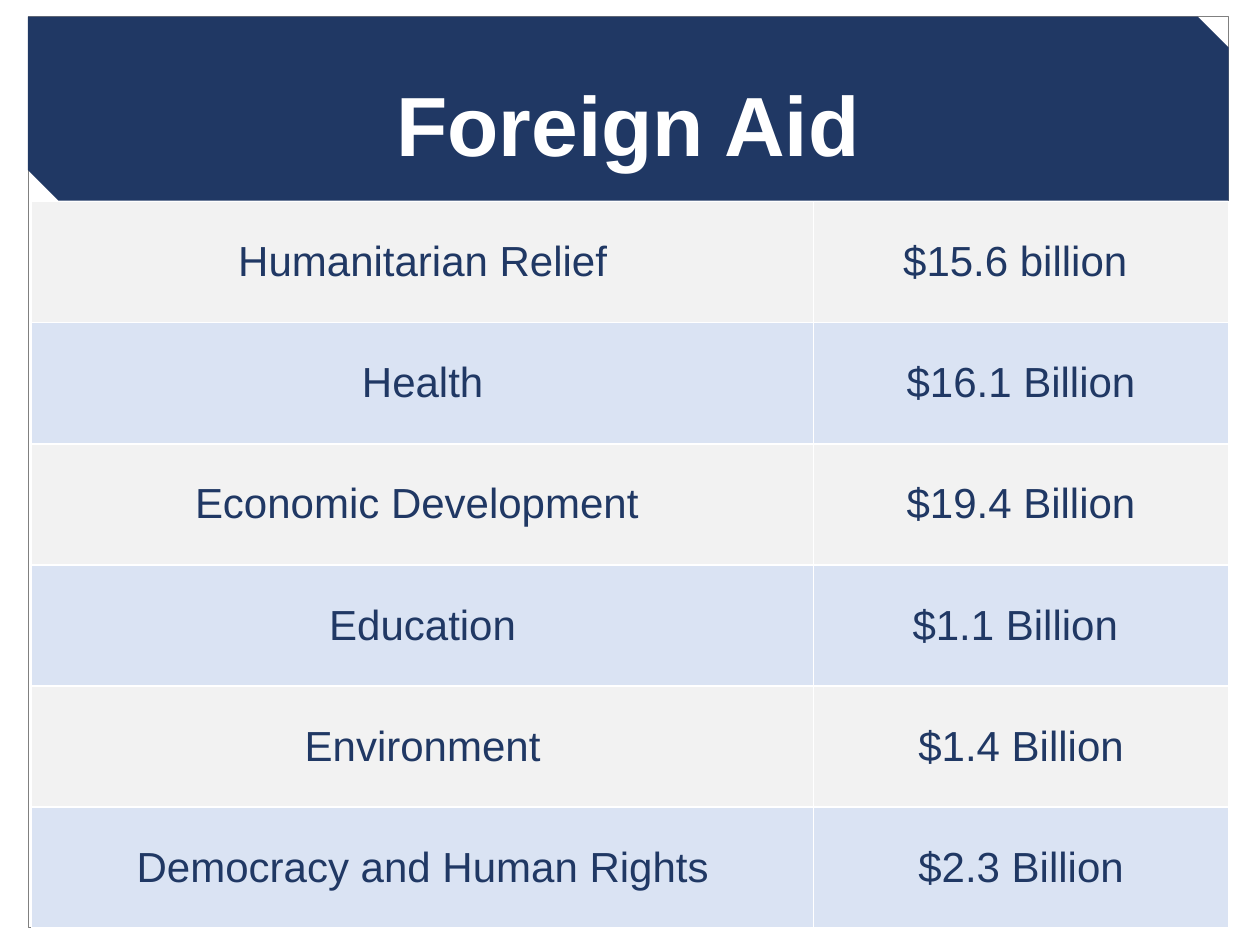
from dataclasses import dataclass

from pptx import Presentation
from pptx.dml.color import RGBColor as RGB
from pptx.enum.shapes import MSO_SHAPE as Shape
from pptx.enum.text import MSO_ANCHOR as Anchor, PP_ALIGN as Align
from pptx.util import Pt


@dataclass(frozen=True)
class Theme:
    font: str = "Arial"
    navy: RGB = RGB(0x20, 0x38, 0x64)
    white: RGB = RGB(0xFF, 0xFF, 0xFF)
    edge: RGB = RGB(0x80, 0x80, 0x80)
    bands: tuple = (RGB(0xF2, 0xF2, 0xF2), RGB(0xDA, 0xE3, 0xF3))
    head: int = 48
    body: int = 24


THEME = Theme()

# Some entries end in a space, which shifts their centring slightly.
AID = [
    ("Humanitarian Relief", "$15.6 billion "),
    ("Health", "$16.1 Billion"),
    ("Economic Development ", "$19.4 Billion"),
    ("Education", "$1.1 Billion "),
    ("Environment", "$1.4 Billion"),
    ("Democracy and Human Rights", "$2.3 Billion"),
]


def style(frame, size, color, bold=False):
    frame.vertical_anchor = Anchor.MIDDLE
    for para in frame.paragraphs:
        para.alignment = Align.CENTER
        for run in para.runs:
            font = run.font
            font.name, font.size, font.bold = THEME.font, Pt(size), bold
            font.color.rgb = color


def add_frame(slide, x, y, w, h):
    frame = slide.shapes.add_shape(Shape.RECTANGLE, Pt(x), Pt(y), Pt(w), Pt(h))
    frame.shadow.inherit = False
    frame.fill.background()
    frame.line.color.rgb = THEME.edge
    frame.line.width = Pt(0.25)


def add_table(slide, x, y, w, h):
    rows, share = len(AID), 0.6535
    grid = slide.shapes.add_table(rows, 2, Pt(x), Pt(y), Pt(w), Pt(h)).table
    grid.first_row = grid.horz_banding = False
    for col, part in zip(grid.columns, (share, 1 - share)):
        col.width = Pt(w * part)
    for i, entry in enumerate(AID):
        grid.rows[i].height = Pt(h / rows)
        for j, text in enumerate(entry):
            cell = grid.cell(i, j)
            cell.text = text
            cell.fill.solid()
            cell.fill.fore_color.rgb = THEME.bands[i % 2]
            cell.vertical_anchor = Anchor.MIDDLE
            style(cell.text_frame, THEME.body, THEME.navy)


def add_banner(slide, x, y, w, h):
    """Draw the snipped band and set the title, a little low, upon it."""
    band = slide.shapes.add_shape(
        Shape.SNIP_2_DIAG_RECTANGLE, Pt(x), Pt(y), Pt(w), Pt(h))
    band.shadow.inherit = False
    band.fill.solid()
    band.fill.fore_color.rgb = THEME.navy
    band.line.fill.background()

    drop = 16.5
    title = slide.shapes.title
    title.left, title.top = Pt(x), Pt(y + drop)
    title.width, title.height = Pt(w), Pt(h - drop)
    title.text_frame.text = "Foreign Aid"
    style(title.text_frame, THEME.head, THEME.white, bold=True)
    band._element.addnext(title._element)


def main():
    deck = Presentation()
    deck.slide_width, deck.slide_height = Pt(720), Pt(540)
    slide = deck.slides.add_slide(deck.slide_layouts[5])
    left, top, width = 16, 9.5, 686
    add_frame(slide, left, top, width, 520.5)
    add_table(slide, left + 2, 115.2, width - 2, 415.2)
    add_banner(slide, left, top, width, 105.2)
    deck.save("out.pptx")


if __name__ == "__main__":
    main()
